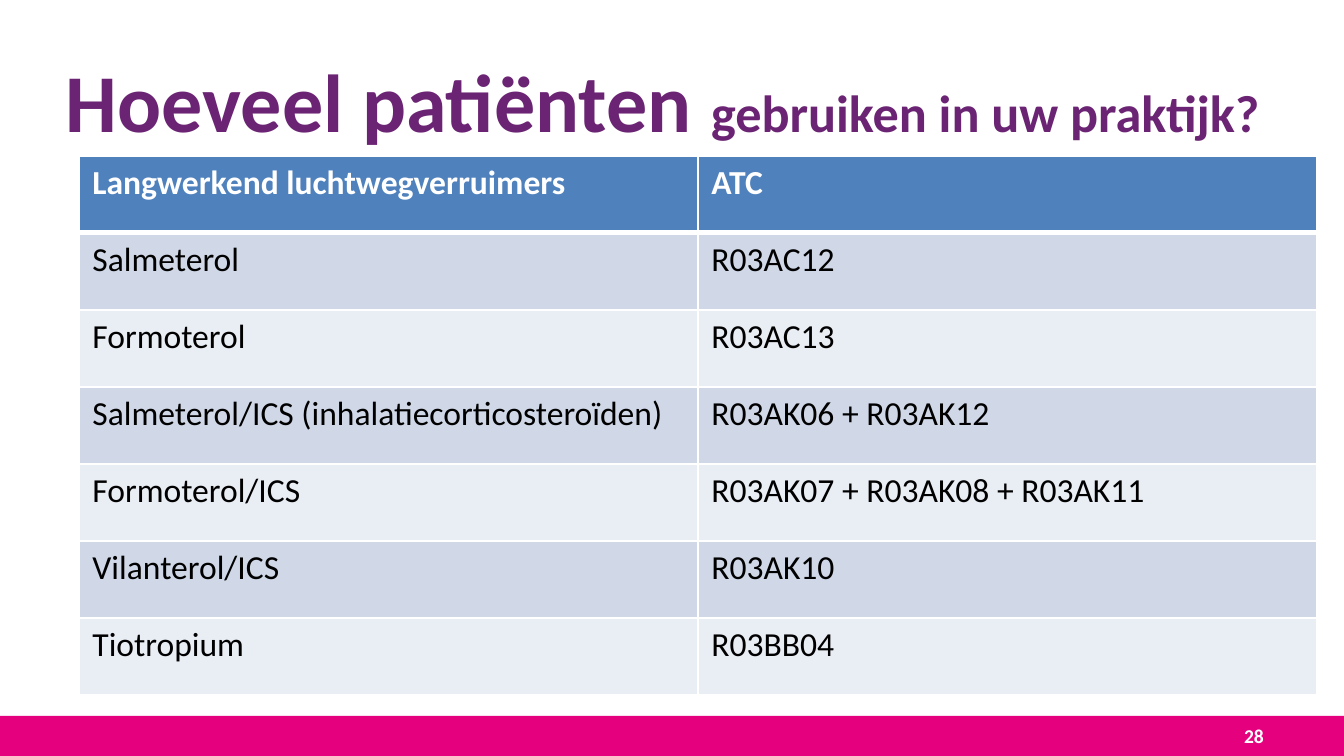
from lxml import etree
from pptx import Presentation
from pptx.dml.color import RGBColor
from pptx.enum.shapes import MSO_SHAPE
from pptx.enum.text import MSO_ANCHOR, PP_ALIGN
from pptx.oxml.ns import qn
from pptx.util import Emu, Pt

RECTANGLE = MSO_SHAPE.RECTANGLE
TOP, MIDDLE = MSO_ANCHOR.TOP, MSO_ANCHOR.MIDDLE
LEFT, RIGHT = PP_ALIGN.LEFT, PP_ALIGN.RIGHT
EMU_PER_PX = 914400 / 134.4
TITLE_ONLY = 5
FONT = "Calibri"
COLORS = {
    "purple": "6B2473",
    "magenta": "E5007E",
    "header": "4F81BD",
    "odd_row": "D0D8E8",
    "even_row": "E9EDF4",
    "white": "FFFFFF",
    "black": "000000",
}
MEDICINES = [
    ("Langwerkend luchtwegverruimers", "ATC"),
    ("Salmeterol", "R03AC12"),
    ("Formoterol", "R03AC13"),
    ("Salmeterol/ICS (inhalatiecorticosteroïden)", "R03AK06 + R03AK12"),
    ("Formoterol/ICS", "R03AK07 + R03AK08 + R03AK11"),
    ("Vilanterol/ICS", "R03AK10"),
    ("Tiotropium", "R03BB04"),
]


def px(length):
    """Turn whole pixels into EMU."""
    return Emu(round(length * EMU_PER_PX))


def color(name):
    """Look up a named colour."""
    return RGBColor.from_string(COLORS[name])


def add_span(para, text, size=18, ink="black", bold=False, align=LEFT):
    """Append formatted text to a paragraph."""
    para.alignment = align
    span = para.add_run()
    span.text = text
    span.font.name = FONT
    span.font.size = Pt(size)
    span.font.bold = bold
    span.font.color.rgb = color(ink)


def set_borders(cell, **widths):
    """Draw white cell borders with the given widths in points."""
    properties = cell._tc.get_or_add_tcPr()
    for index, side in enumerate(("L", "R", "T", "B")):
        line = etree.Element(qn(f"a:ln{side}"), w=str(Pt(widths.get(side, 1))))
        fill = etree.SubElement(line, qn("a:solidFill"))
        etree.SubElement(fill, qn("a:srgbClr"), val=COLORS["white"])
        properties.insert(index, line)


def add_title(page, left, top, width, height):
    """Fill the title placeholder with a large and a small part."""
    title = page.shapes.title
    title.left, title.top = px(left), px(top)
    title.width, title.height = px(width), px(height)
    frame = title.text_frame
    frame.word_wrap = True
    frame.vertical_anchor = TOP
    frame.margin_left = frame.margin_right = px(8)
    frame.margin_top, frame.margin_bottom = px(11), 0
    para = frame.paragraphs[0]
    add_span(para, "Hoeveel patiënten ", size=44, ink="purple", bold=True)
    add_span(para, "gebruiken in uw praktijk?", size=28, ink="purple", bold=True)


def add_medicine_table(page, left, top, width, height):
    """Place the table of medicines and ATC codes."""
    frame = page.shapes.add_table(
        len(MEDICINES), len(MEDICINES[0]), px(left), px(top), px(width), px(height)
    )
    for row, texts in enumerate(MEDICINES):
        is_header = row == 0
        fill = "header" if is_header else "odd_row" if row % 2 else "even_row"
        borders = {"B": 3} if is_header else {"T": 3} if row == 1 else {}
        for column, text in enumerate(texts):
            cell = frame.table.cell(row, column)
            cell.fill.solid()
            cell.fill.fore_color.rgb = color(fill)
            set_borders(cell, **borders)
            ink = "white" if is_header else "black"
            add_span(cell.text_frame.paragraphs[0], text, ink=ink, bold=is_header)


def add_footer(page, left, top, width, height):
    """Place the footer band and its page number."""
    band = page.shapes.add_shape(RECTANGLE, px(left), px(top), px(width), px(height))
    band.shadow.inherit = False
    band.fill.solid()
    band.fill.fore_color.rgb = color("magenta")
    band.line.fill.background()
    box = page.shapes.add_textbox(px(left + width - 380), px(top), px(313), px(height))
    frame = box.text_frame
    frame.word_wrap = True
    frame.vertical_anchor = MIDDLE
    add_span(frame.paragraphs[0], "28", size=10.5, ink="white", bold=True, align=RIGHT)


def main():
    """Build the deck and save it."""
    deck = Presentation()
    deck.slide_width, deck.slide_height = px(1344), px(756)
    page = deck.slides.add_slide(deck.slide_layouts[TITLE_ONLY])
    add_footer(page, 0, 716, 1344, 40)
    add_title(page, 58, 39, 1238, 106)
    add_medicine_table(page, 79, 156, 1238, 539)
    deck.save("out.pptx")


if __name__ == "__main__":
    main()
